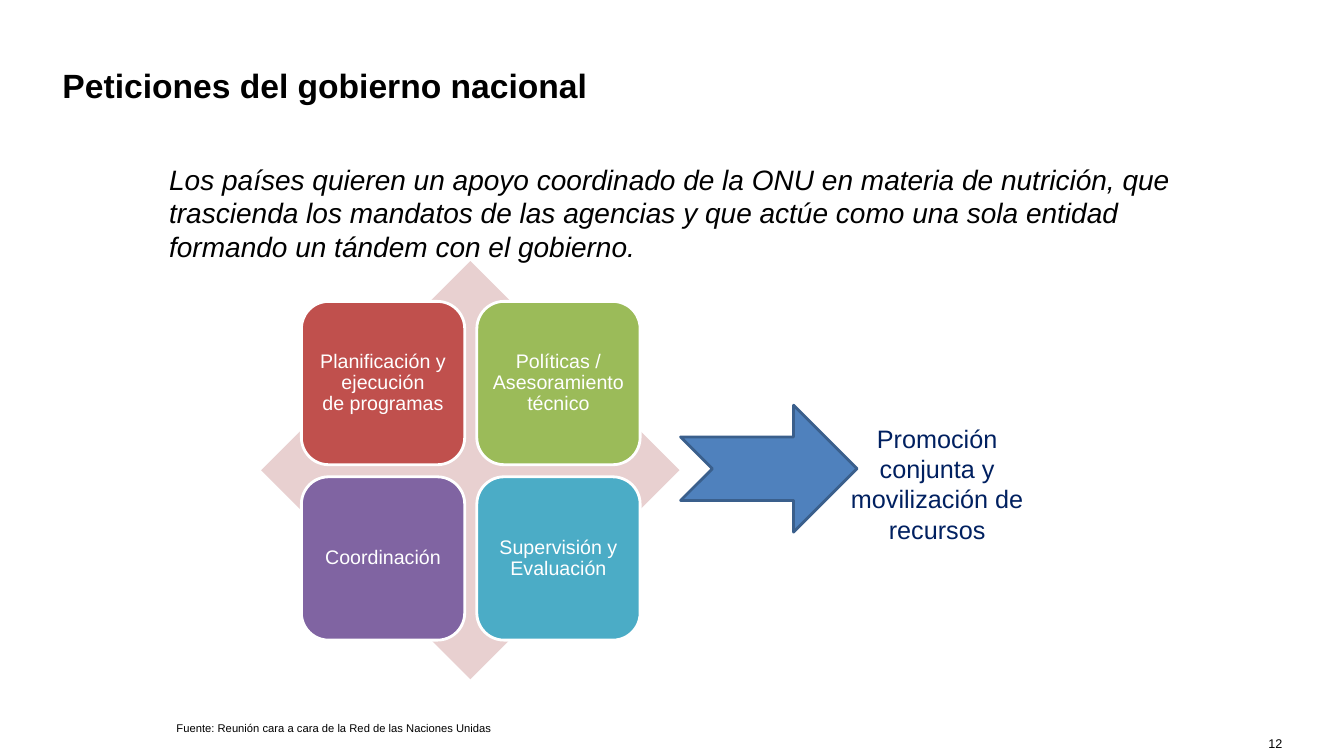
from pptx import Presentation
from pptx import util as u
from pptx.dml.color import RGBColor
from pptx.enum import shapes, text

prs = Presentation()
prs.slide_width = u.Inches(13.33)
prs.slide_height = u.Inches(7.5)
s = prs.slides.add_slide(prs.slide_layouts[6])
col, row = prs.slide_width / 100, prs.slide_height / 100
S, A, P = shapes.MSO_SHAPE, text.MSO_ANCHOR, text.PP_ALIGN


def add_shape(kind, x, y, w, h, fill, line=None):
    sp = s.shapes.add_shape(kind, int(x * col), int(y * row), int(w * col), int(h * row))
    sp.shadow.inherit = False
    sp.fill.solid()
    sp.fill.fore_color.rgb = RGBColor.from_string(fill)
    if line:
        sp.line.color.rgb = RGBColor.from_string(line)
        sp.line.width = u.Pt(2)
    else:
        sp.line.fill.background()
    return sp


def write(sp, words, size, color="000000", align=P.LEFT, anchor=A.TOP,
          pad=(0.1, 0.05), spacing=1.0, wrap=True):
    tf = sp.text_frame
    tf.text = words
    tf.word_wrap = wrap
    tf.vertical_anchor = anchor
    tf.margin_left = tf.margin_right = u.Inches(pad[0])
    tf.margin_top = tf.margin_bottom = u.Inches(pad[1])
    p = tf.paragraphs[0]
    p.alignment = align
    p.line_spacing = spacing
    for r in p.runs:
        r.font.name = "Arial"
        r.font.size = u.Pt(size)
        r.font.color.rgb = RGBColor.from_string(color)
    return p


add_shape(S.DIAMOND, 19.43, 34.53, 31.13, 55.33, "E8D0D0")

tiles = [
    ("Planificación y ejecución\vde programas", "C0504D"),
    ("Políticas / Asesoramiento técnico", "9BBB59"),
    ("Coordinación", "8064A2"),
    ("Supervisión y Evaluación", "4BACC6"),
]
for i, (words, fill) in enumerate(tiles):
    x = 22.43 + i % 2 * 13.05
    y = 39.87 + i // 2 * 23.2
    sp = add_shape(S.ROUNDED_RECTANGLE, x, y, 12.15, 21.6, fill, "FFFFFF")
    write(sp, words, 14, "FFFFFF", P.CENTER, A.MIDDLE, (0.06, 0.06), 0.9)

add_shape(S.NOTCHED_RIGHT_ARROW, 50.64, 53.6, 13.13, 16.8, "4F81BD", "3A5F8C")

labels = [
    ((4.65, 2.4, 90.77, 12.13), "Peticiones del gobierno nacional", 24,
     dict(anchor=A.BOTTOM, pad=(0, 0.05))),
    ((62.34, 55.33, 14.78, 13.47), "Promoción conjunta y movilización de recursos", 18,
     dict(color="002060", align=P.CENTER)),
    ((11.85, 20.8, 76.37, 10.27),
     "Los países quieren un apoyo coordinado de la ONU en materia de nutrición, "
     "que trascienda los mandatos de las agencias y que actúe como una sola entidad "
     "formando un tándem con el gobierno.", 20, {}),
    ((13.13, 92.4, 73.82, 4.8),
     "Fuente: Reunión cara a cara de la Red de las Naciones Unidas", 8,
     dict(anchor=A.BOTTOM, pad=(0, 0), spacing=0.9)),
    ((93.47, 97.33, 1.95, 1.87), "12", 9,
     dict(align=P.RIGHT, pad=(0, 0), wrap=False)),
]
for (x, y, w, h), words, size, style in labels:
    sp = s.shapes.add_textbox(int(x * col), int(y * row), int(w * col), int(h * row))
    p = write(sp, words, size, **style)
    p.runs[0].font.bold = size == 24
    p.runs[0].font.italic = size == 20

prs.save("out.pptx")
